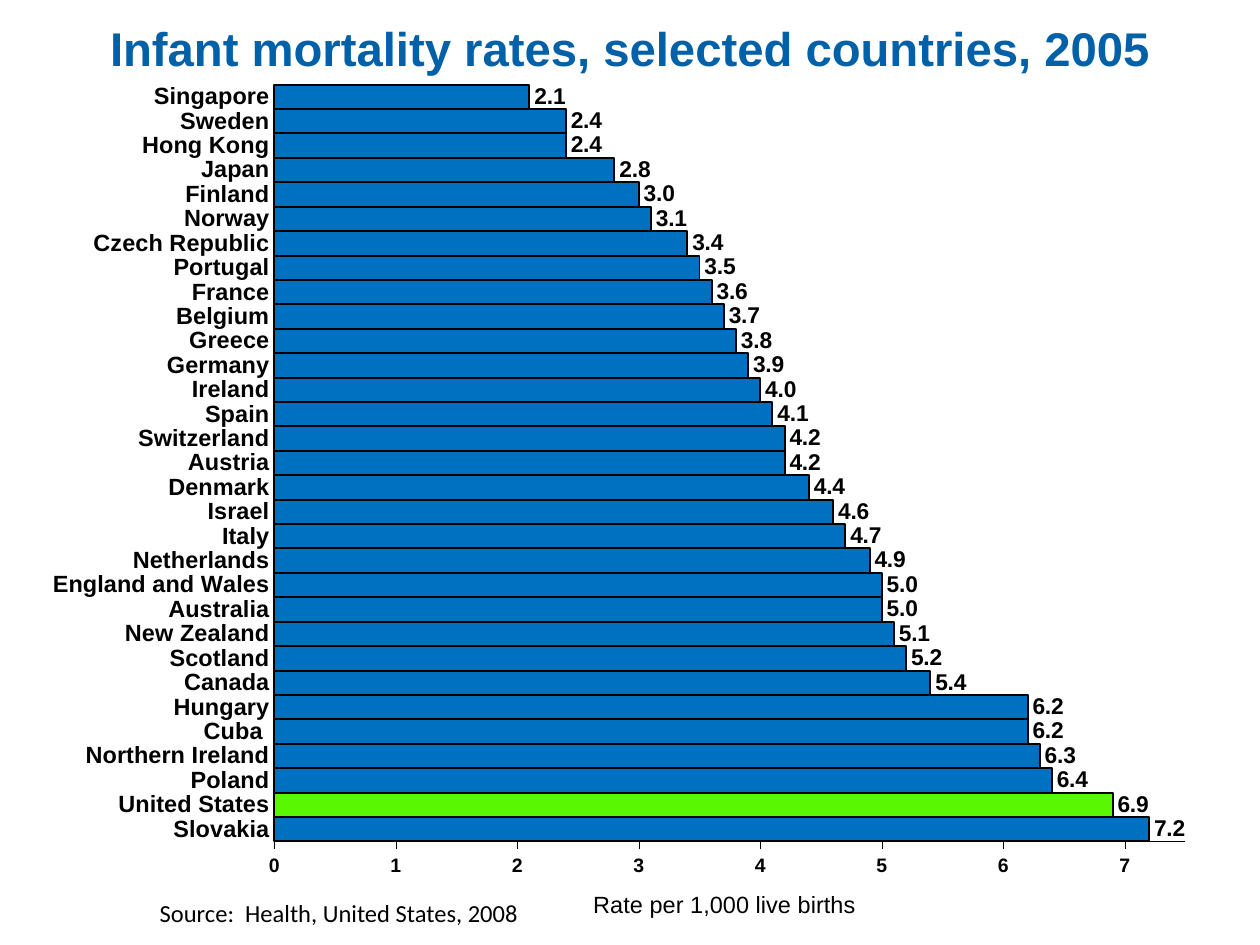
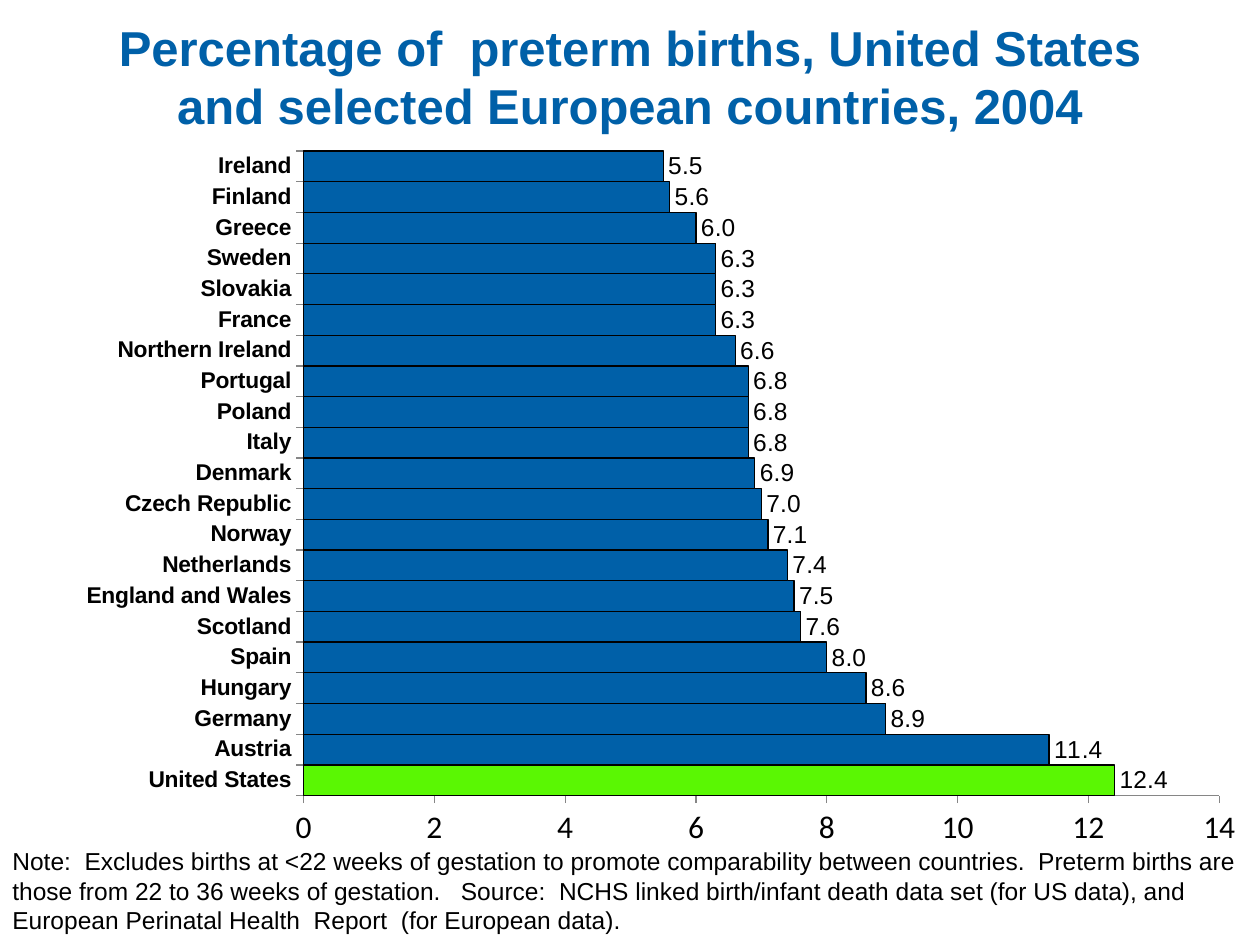
"""Build two slides that rank countries by infant mortality and preterm births."""
from lxml import etree
from pptx import Presentation
from pptx.chart.data import CategoryChartData
from pptx.dml.color import RGBColor
from pptx.enum.chart import XL_CHART_TYPE, XL_LABEL_POSITION, XL_TICK_MARK
from pptx.enum.text import MSO_ANCHOR, MSO_AUTO_SIZE, PP_ALIGN
from pptx.oxml.ns import qn
from pptx.util import Cm, Pt

BAR = XL_CHART_TYPE.BAR_CLUSTERED
OUTSIDE_END = XL_LABEL_POSITION.OUTSIDE_END
TICK_OUTSIDE, TICK_NONE = XL_TICK_MARK.OUTSIDE, XL_TICK_MARK.NONE
MIDDLE, CENTER = MSO_ANCHOR.MIDDLE, PP_ALIGN.CENTER
FIXED, GROW = MSO_AUTO_SIZE.NONE, MSO_AUTO_SIZE.SHAPE_TO_FIT_TEXT

BLACK = RGBColor(0x00, 0x00, 0x00)
GRAY = RGBColor(0x86, 0x86, 0x86)
TITLE_BLUE = RGBColor(0x00, 0x60, 0xA8)
BRIGHT_BLUE = RGBColor(0x00, 0x70, 0xC0)
HIGHLIGHT_GREEN = RGBColor(0x5A, 0xF7, 0x03)

HIGHLIGHT = "United States"

MORTALITY = [
    ("Slovakia", 7.2), ("United States", 6.9), ("Poland", 6.4),
    ("Northern Ireland", 6.3), ("Cuba ", 6.2), ("Hungary", 6.2),
    ("Canada", 5.4), ("Scotland", 5.2), ("New Zealand", 5.1),
    ("Australia", 5.0), ("England and Wales", 5.0), ("Netherlands", 4.9),
    ("Italy", 4.7), ("Israel", 4.6), ("Denmark", 4.4), ("Austria", 4.2),
    ("Switzerland", 4.2), ("Spain", 4.1), ("Ireland", 4.0),
    ("Germany", 3.9), ("Greece", 3.8), ("Belgium", 3.7), ("France", 3.6),
    ("Portugal", 3.5), ("Czech Republic", 3.4), ("Norway", 3.1),
    ("Finland", 3.0), ("Japan", 2.8), ("Hong Kong", 2.4), ("Sweden", 2.4),
    ("Singapore", 2.1),
]
PRETERM = [
    ("United States", 12.4), ("Austria", 11.4), ("Germany", 8.9),
    ("Hungary", 8.6), ("Spain", 8.0), ("Scotland", 7.6),
    ("England and Wales", 7.5), ("Netherlands", 7.4), ("Norway", 7.1),
    ("Czech Republic", 7.0), ("Denmark", 6.9), ("Italy", 6.8),
    ("Poland", 6.8), ("Portugal", 6.8), ("Northern Ireland", 6.6),
    ("France", 6.3), ("Slovakia", 6.3), ("Sweden", 6.3), ("Greece", 6.0),
    ("Finland", 5.6), ("Ireland", 5.5),
]


def style_font(font, size, name="Arial", bold=False, color=BLACK):
    font.size, font.name, font.bold = Pt(size), name, bold
    font.color.rgb = color


def write(frame, text, align=None, **style):
    para = frame.paragraphs[0]
    para.alignment = align
    span = para.add_run()
    span.text = text
    style_font(span.font, **style)


def paint(target, fill, line_width):
    target.format.fill.solid()
    target.format.fill.fore_color.rgb = fill
    target.format.line.color.rgb = BLACK
    target.format.line.width = Pt(line_width)


def set_layout(holder, index, inner=False, **fractions):
    for old in holder.findall(qn("c:layout")):
        holder.remove(old)
    layout = etree.Element(qn("c:layout"))
    manual = etree.SubElement(layout, qn("c:manualLayout"))
    settings = {"layoutTarget": "inner"} if inner else {}
    settings.update(xMode="edge", yMode="edge", **fractions)
    for tag, value in settings.items():
        etree.SubElement(manual, qn(f"c:{tag}")).set("val", str(value))
    holder.insert(index, layout)


class Deck:
    def __init__(self):
        self.deck = Presentation()
        self.deck.slide_width, self.deck.slide_height = Cm(25.4), Cm(19.05)
        self.page = None

    def add_page(self, title, left, top, width, height, size):
        self.page = self.deck.slides.add_slide(self.deck.slide_layouts[5])
        box = self.page.shapes.title
        box.left, box.top, box.width, box.height = map(Cm, (left, top, width, height))
        frame = box.text_frame
        frame.auto_size, frame.word_wrap, frame.vertical_anchor = FIXED, True, MIDDLE
        write(frame, title, align=CENTER, size=size, bold=True, color=TITLE_BLUE)

    def add_note(self, text, left, top, width, height, **style):
        box = self.page.shapes.add_textbox(*map(Cm, (left, top, width, height)))
        box.text_frame.word_wrap, box.text_frame.auto_size = True, GROW
        write(box.text_frame, text, size=14, **style)

    def add_ranking(self, rows, place, plot, bar_color, bar_line):
        data = CategoryChartData(number_format="0.0")
        data.categories = [country for country, _ in rows]
        data.add_series("Series 1", [rate for _, rate in rows])
        chart = self.page.shapes.add_chart(BAR, *map(Cm, place), data).chart
        chart.has_legend = chart.has_title = False
        set_layout(chart.element.find(".//" + qn("c:plotArea")), 0, inner=True, **plot)
        bars = chart.plots[0]
        bars.gap_width, bars.vary_by_categories = 0, False
        series = bars.series[0]
        paint(series, bar_color, bar_line)
        for index, (country, _) in enumerate(rows):
            if country == HIGHLIGHT:
                paint(series.points[index], HIGHLIGHT_GREEN, bar_line)
        return chart

    def style_labels(self, chart, **style):
        bars = chart.plots[0]
        bars.has_data_labels = True
        labels = bars.data_labels
        labels.show_value, labels.position = True, OUTSIDE_END
        labels.number_format, labels.number_format_is_linked = "0.0", False
        style_font(labels.font, **style)

    def style_axis(self, axis, tick, line_color, line_width, **style):
        axis.has_major_gridlines = False
        axis.major_tick_mark, axis.minor_tick_mark = tick, TICK_NONE
        axis.format.line.color.rgb = line_color
        axis.format.line.width = Pt(line_width)
        style_font(axis.tick_labels.font, **style)

    def style_names(self, chart, tick, **style):
        self.style_axis(chart.category_axis, tick, bold=True, **style)
        axis = chart.element.find(".//" + qn("c:catAx"))
        body = axis.find(qn("c:txPr")).find(qn("a:bodyPr"))
        body.set("rot", "0")
        body.set("vert", "horz")
        skip = etree.Element(qn("c:tickLblSkip"), val="1")
        axis.find(qn("c:noMultiLvlLbl")).addprevious(skip)

    def style_scale(self, axis, maximum, step, **style):
        self.style_axis(axis, TICK_OUTSIDE, **style)
        axis.minimum_scale, axis.maximum_scale, axis.major_unit = 0, maximum, step
        axis.tick_labels.number_format = "0"
        axis.tick_labels.number_format_is_linked = False

    def add_axis_title(self, axis, text, x, y):
        axis.has_title = True
        write(axis.axis_title.text_frame, text, size=13.4)
        set_layout(axis.axis_title.element, 1, x=x, y=y)

    def save(self):
        self.deck.save("out.pptx")


def add_mortality_page(deck):
    deck.add_page("Infant mortality rates, selected countries, 2005",
                  0, 0, 25.4, 1.9, size=27)
    chart = deck.add_ranking(MORTALITY, (-2.9, 1.27, 27.46, 19.05),
                             dict(x=0.307, y=0.023, w=0.669, h=0.801),
                             BRIGHT_BLUE, 1.14)
    line = dict(line_color=BLACK, line_width=0.29)
    deck.style_labels(chart, size=13, bold=True)
    deck.style_names(chart, TICK_NONE, size=13.4, **line)
    deck.style_scale(chart.value_axis, 7.5, 1, size=11.1, bold=True, **line)
    deck.add_axis_title(chart.value_axis, "Rate per 1,000 live births", 0.538, 0.87)
    deck.add_note("Source:  Health, United States, 2008",
                  2.97, 17.98, 20.32, 0.86, name="Calibri")


def add_preterm_page(deck):
    deck.add_page("Percentage of  preterm births, United States "
                  "and selected European countries, 2004",
                  1.9, 0.64, 21.6, 1.78, size=28)
    chart = deck.add_ranking(PRETERM, (1.27, 2.74, 24.13, 14.6),
                             dict(x=0.201, y=0.021, w=0.765, h=0.89),
                             TITLE_BLUE, 0.75)
    line = dict(line_color=GRAY, line_width=0.75)
    deck.style_labels(chart, size=14)
    deck.style_names(chart, TICK_OUTSIDE, size=13, **line)
    deck.style_scale(chart.value_axis, 14, 2, size=18, name="Calibri", **line)
    deck.add_note("Note:  Excludes births at <22 weeks of gestation to promote "
                  "comparability between countries.  Preterm births are those from "
                  "22 to 36 weeks of gestation.   Source:  NCHS linked birth/infant "
                  "death data set (for US data), and European Perinatal Health  "
                  "Report  (for European data).",
                  0, 16.94, 25.83, 2.06)


def main():
    deck = Deck()
    add_mortality_page(deck)
    add_preterm_page(deck)
    deck.save()


if __name__ == "__main__":
    main()
